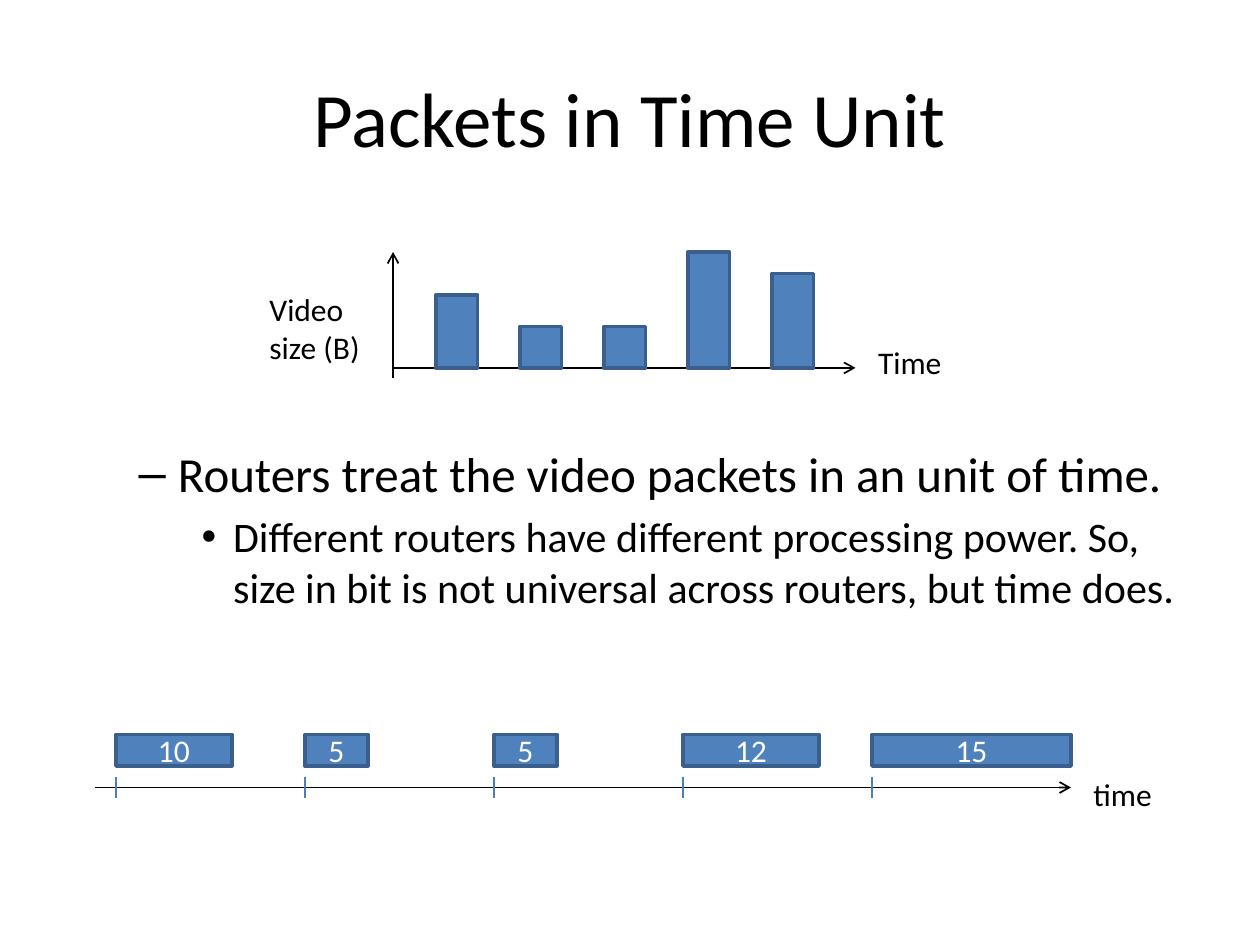
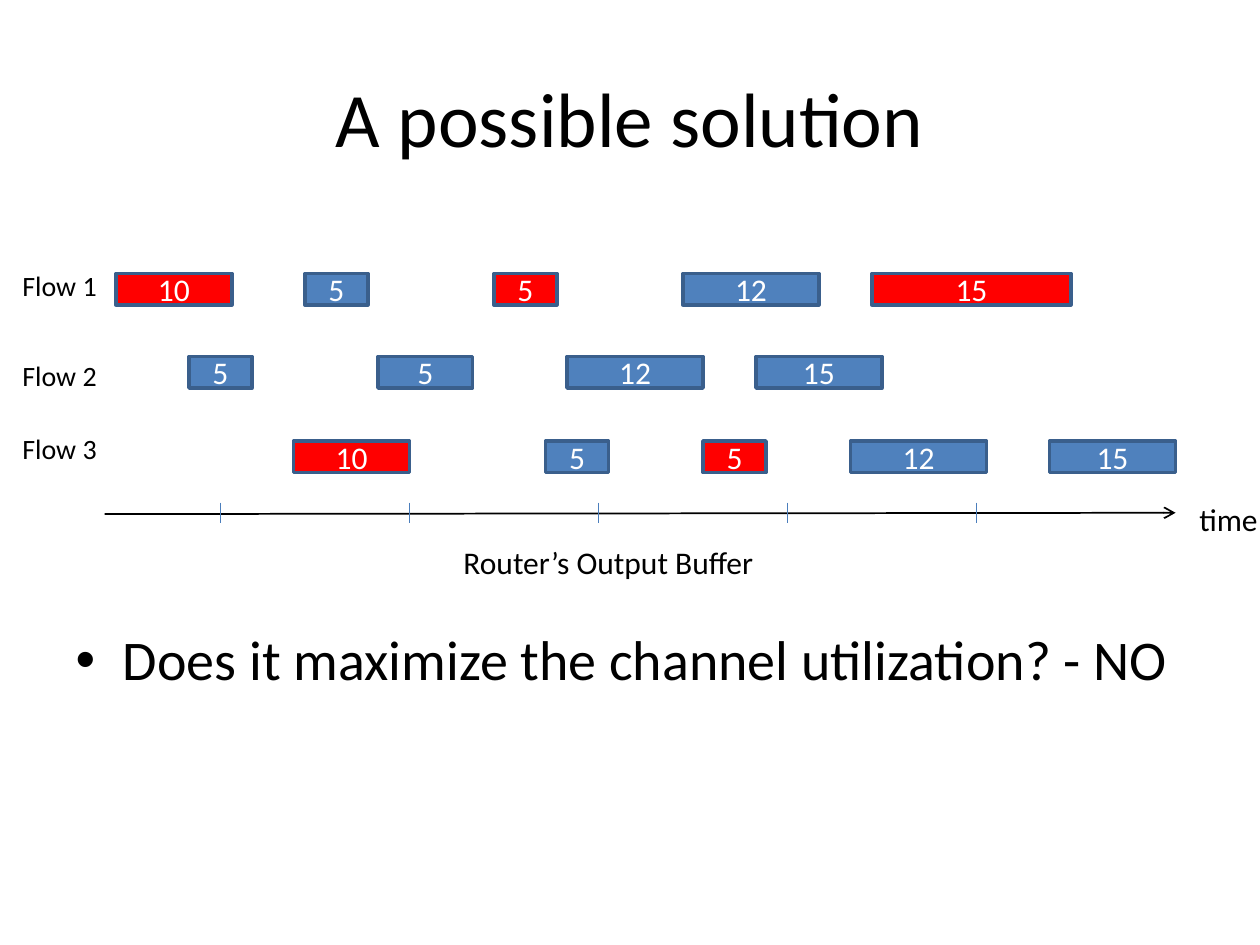
import pptx
import pptx.dml.color
import pptx.enum.shapes
import pptx.enum.text
import pptx.oxml
import pptx.oxml.ns
import pptx.util

Inches = pptx.util.Inches
Pt = pptx.util.Pt
ALIGN = pptx.enum.text.PP_ALIGN
ANCHOR = pptx.enum.text.MSO_ANCHOR
BLUE, EDGE, TICK = "4F81BD", "3A5F8C", "4B7EBC"
RED, BLACK, WHITE = "FF0000", "000000", "FFFFFF"


def ink(target, code):
    target.rgb = pptx.dml.color.RGBColor.from_string(code)


def write(frame, text, size=18, color=BLACK, align=ALIGN.LEFT,
          anchor=ANCHOR.TOP, level=0, gap=0, wrap=True, more=False):
    frame.word_wrap = wrap
    frame.auto_size = pptx.enum.text.MSO_AUTO_SIZE.NONE
    frame.vertical_anchor = anchor
    para = frame.add_paragraph() if more else frame.paragraphs[0]
    para.alignment = align
    para.level = level
    para.space_before = Pt(gap)
    run = para.add_run()
    run.text = text
    run.font.name = "Calibri"
    run.font.size = Pt(size)
    ink(run.font.color, color)


deck = pptx.Presentation()
deck.slide_width = Inches(10)
deck.slide_height = Inches(7.5)

pages, lists = [], []
for name, top in [("Packets in Time Unit", 3.47), ("A possible solution", 4.91)]:
    page = deck.slides.add_slide(deck.slide_layouts[1])
    title, body = page.placeholders
    title.left, title.top = Inches(0.5), Inches(0.3)
    title.width, title.height = Inches(9), Inches(1.25)
    write(title.text_frame, name, size=44, align=ALIGN.CENTER, anchor=ANCHOR.MIDDLE)
    body.left, body.top = Inches(0.5), Inches(top)
    body.width, body.height = Inches(9), Inches(6.7 - top)
    pages.append(page)
    lists.append(body.text_frame)
units, answer = pages

write(lists[0], "Routers treat the video packets in an unit of time.", size=28, level=1)
write(lists[0], "Different routers have different processing power. So, size in bit "
      "is not universal across routers, but time does.",
      size=24, level=2, gap=4.8, more=True)
write(lists[1], "Does it maximize the channel utilization? - NO", size=32)

lines = [
    (units, 3.12, 3, 3.12, 2, BLACK),
    (units, 3.12, 2.92, 6.79, 2.92, BLACK),
    (units, 0.75, 6.25, 8.5, 6.25, BLACK),
    (answer, 0.83, 4.08, 9.33, 4.07, BLACK),
]
for page, left, top in [(units, 0.92, 6.17), (answer, 1.75, 3.99)]:
    for i in range(5):
        x = left + 1.5 * i
        lines.append((page, x, top, x, top + 0.16, TICK))

for page, x1, y1, x2, y2, color in lines:
    line = page.shapes.add_connector(pptx.enum.shapes.MSO_CONNECTOR.STRAIGHT,
                                     Inches(x1), Inches(y1), Inches(x2), Inches(y2))
    ink(line.line.color, color)
    line.line.width = Pt(1 if color == BLACK else 0.75)
    props = line.line._get_or_add_ln()
    if color == BLACK:
        tail = pptx.oxml.parse_xml(
            "<a:tailEnd %s type='arrow'/>" % pptx.oxml.ns.nsdecls("a"))
        props.append(tail)
    props.addnext(pptx.oxml.parse_xml(
        "<a:effectLst %s/>" % pptx.oxml.ns.nsdecls("a")))

blocks = []
for i, high in enumerate([0.58, 0.33, 0.33, 0.92, 0.75]):
    blocks.append((units, 3.46 + i * 2 / 3, 2.92 - high, 0.33, high, BLUE, ""))

starts = [0.92 + 1.5 * i for i in range(5)]
wide = [0.92, 0.5, 0.5, 1.08, 1.58]
sizes = ["10", "5", "5", "12", "15"]
flows = [
    (units, 5.83, starts, wide, sizes, ()),
    (answer, 2.17, starts, wide, sizes, (0, 2, 4)),
    (answer, 2.83, [1.5, 3, 4.5, 6], [0.5, 0.75, 1.08, 1], sizes[1:], ()),
    (answer, 3.5, [2.33, 4.33, 5.58, 6.75, 8.33], [0.92, 0.5, 0.5, 1.08, 1],
     sizes, (0, 2)),
]
for page, top, lefts, widths, labels, reds in flows:
    for i, (left, width, label) in enumerate(zip(lefts, widths, labels)):
        fill = RED if i in reds else BLUE
        blocks.append((page, left, top, width, 0.25, fill, label))

for page, left, top, width, high, fill, label in blocks:
    block = page.shapes.add_shape(pptx.enum.shapes.MSO_SHAPE.RECTANGLE, Inches(left),
                                  Inches(top), Inches(width), Inches(high))
    block.shadow.inherit = False
    block.fill.solid()
    ink(block.fill.fore_color, fill)
    ink(block.line.color, EDGE)
    block.line.width = Pt(2)
    if label:
        write(block.text_frame, label, color=WHITE, align=ALIGN.CENTER,
              anchor=ANCHOR.MIDDLE)

notes = [
    (units, "Time", 6.87, 2.67, 0.71, 0.4, 18, False),
    (units, "Video size (B)", 2.04, 2.25, 1, 0.71, 18, True),
    (units, "time", 8.58, 6.1, 0.67, 0.4, 18, False),
    (answer, "time", 9.42, 3.92, 0.67, 0.4, 18, False),
    (answer, "Flow 1", 0.08, 2.08, 0.83, 0.37, 16, True),
    (answer, "Flow 2", 0.08, 2.8, 0.83, 0.37, 16, True),
    (answer, "Flow 3", 0.08, 3.38, 0.83, 0.37, 16, True),
    (answer, "Router’s Output Buffer", 3.58, 4.26, 2.58, 0.4, 18, True),
]
for page, text, left, top, width, high, size, wrap in notes:
    box = page.shapes.add_textbox(Inches(left), Inches(top), Inches(width), Inches(high))
    write(box.text_frame, text, size=size, wrap=wrap)

deck.save("out.pptx")
